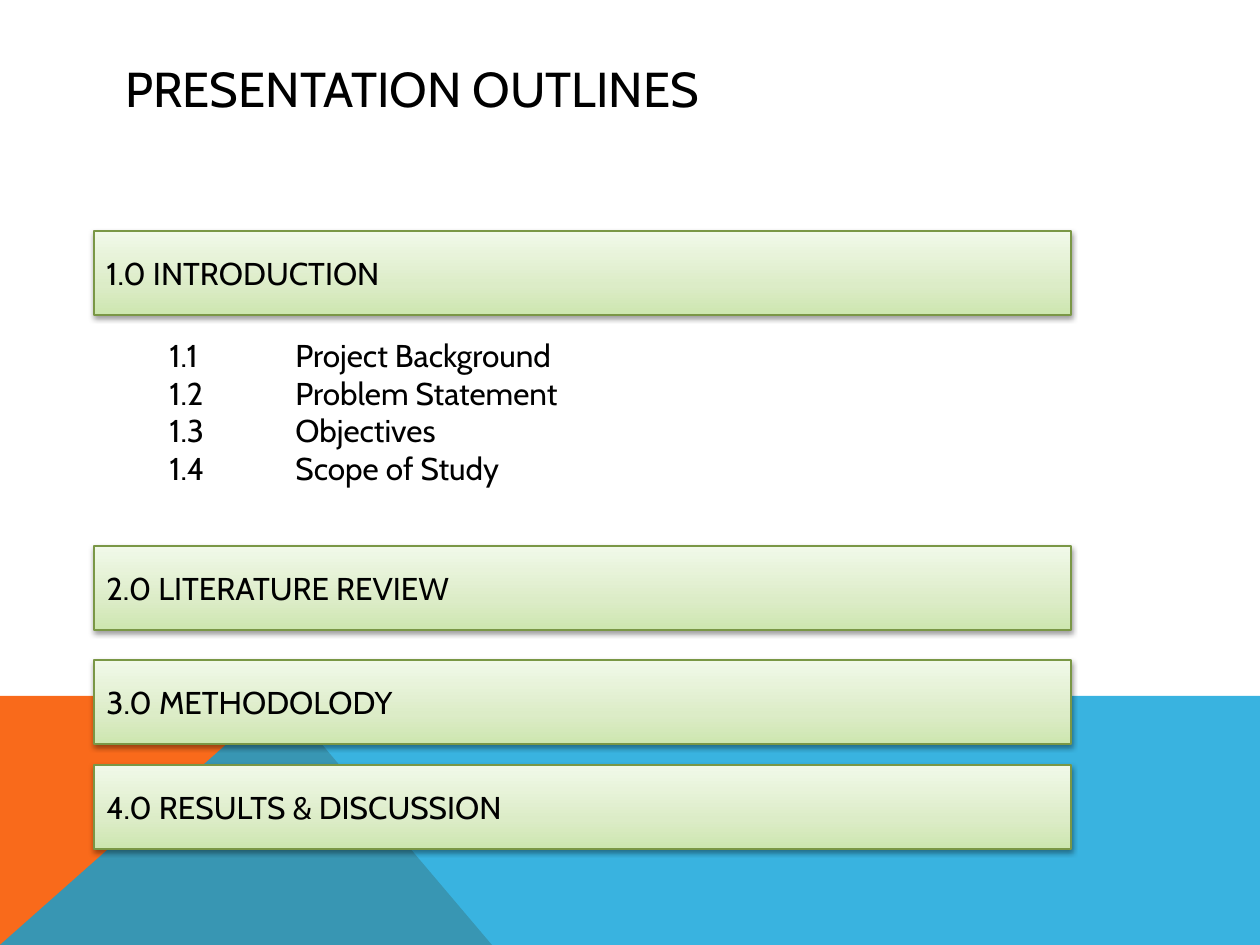
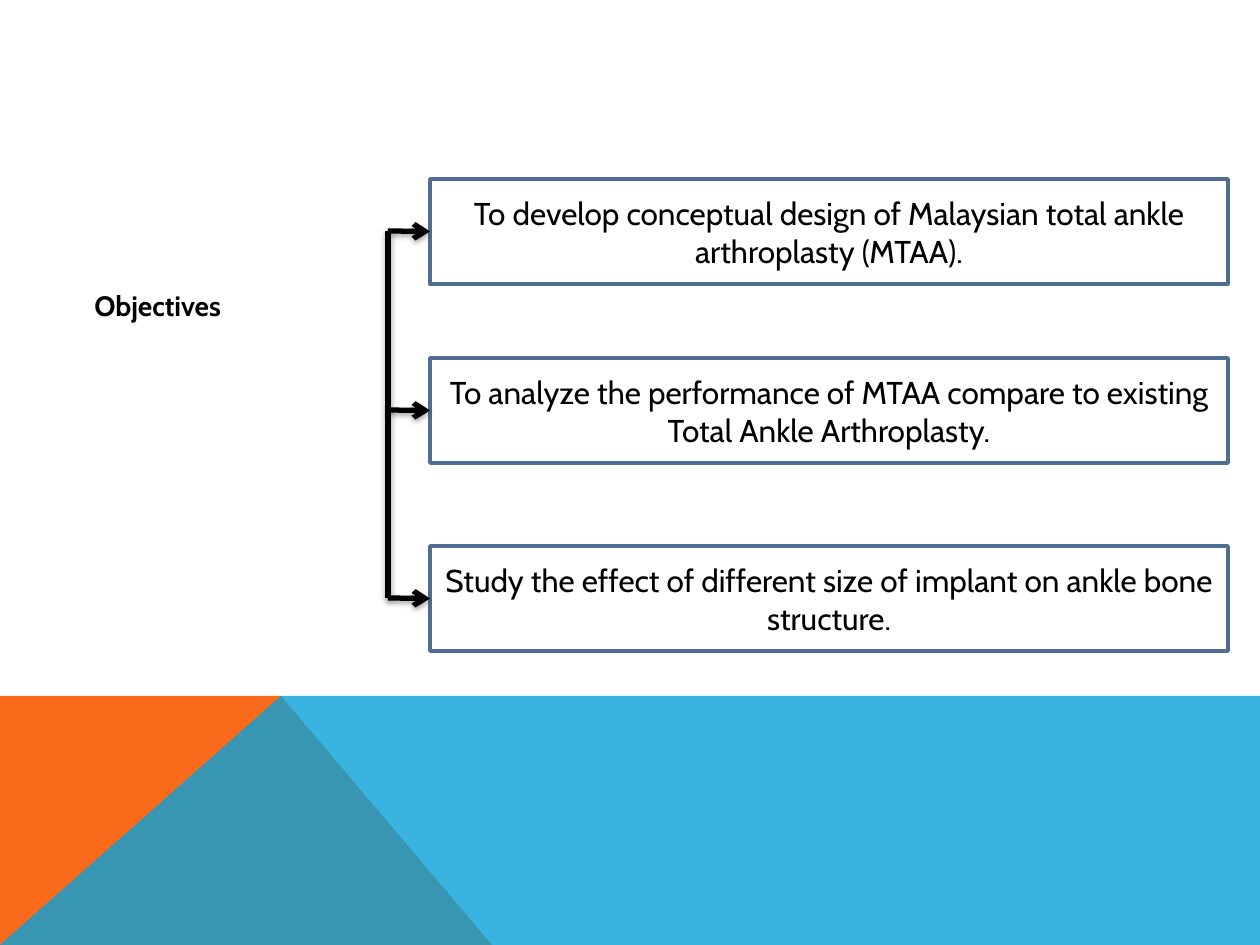
from lxml.etree import SubElement
from copy import deepcopy
from pptx import Presentation
from pptx.dml.color import RGBColor
from pptx.enum.shapes import MSO_CONNECTOR, MSO_SHAPE
from pptx.enum.text import MSO_ANCHOR, PP_ALIGN
from pptx.oxml.ns import qn
from pptx.util import Inches, Pt

PX = Inches(1) / 126
FONT = "Cabin"
COLORS = {
    "text": "000000",
    "paper": "FFFFFF",
    "orange": "F96A1B",
    "blue": "08A1D9",
    "bar_bottom": "CDE6AF",
    "bar_middle": "DCECC7",
    "bar_top": "F1F9E9",
    "bar_edge": "7A9746",
    "goal_edge": "506E94",
}
RGB = {name: RGBColor.from_string(value) for name, value in COLORS.items()}


def px(*lengths):
    return [round(length * PX) for length in lengths]


def write(shape, text, size, align=PP_ALIGN.LEFT, bold=False):
    frame = shape.text_frame
    frame.word_wrap = True
    frame.vertical_anchor = MSO_ANCHOR.MIDDLE
    frame.text = text
    for paragraph in frame.paragraphs:
        paragraph.alignment = align
        for run in paragraph.runs:
            run.font.name = FONT
            run.font.size = Pt(size)
            run.font.bold = bold
            run.font.color.rgb = RGB["text"]


prs = Presentation()
prs.slide_width, prs.slide_height = px(1260, 945)
outline_slide, objectives_slide = [prs.slides.add_slide(prs.slide_layouts[6]) for _ in range(2)]

# Bottom band shared by both slides: outline points and opacity in percent
band = [
    ("orange", [(0, 945), (0, 696), (281, 696), (492, 945)], 100),
    ("blue", [(0, 945), (281, 696), (1260, 696), (1260, 945)], 80),
]
for slide in prs.slides:
    for color, points, opacity in band:
        builder = slide.shapes.build_freeform(*points[0], scale=PX)
        builder.add_line_segments(points[1:], close=True)
        panel = builder.convert_to_shape()
        panel.shadow.inherit = False
        panel.line.fill.background()
        panel.fill.solid()
        panel.fill.fore_color.rgb = RGB[color]
        if opacity < 100:
            tint = panel._element.spPr.find(".//" + qn("a:srgbClr"))
            SubElement(tint, qn("a:alpha"), val=str(opacity * 1000))

# Parts that cast a soft shadow, with its opacity in percent
shadowed = []

# Outline slide: title
title = outline_slide.shapes.add_textbox(*px(113, 50, 1036, 76))
write(title, "PRESENTATION OUTLINES", 28)

# Outline slide: chapter bars
chapters = [
    (231, "1.0 INTRODUCTION"),
    (546, "2.0 LITERATURE REVIEW"),
    (660, "3.0 METHODOLODY"),
    (765, "4.0 RESULTS & DISCUSSION"),
]
for top, heading in chapters:
    bar = outline_slide.shapes.add_shape(MSO_SHAPE.RECTANGLE, *px(94, top, 977, 84))
    bar.shadow.inherit = False
    bar.line.color.rgb = RGB["bar_edge"]
    bar.line.width = Pt(0.75)
    bar.fill.gradient()
    bar.fill.gradient_angle = 90
    stop_list = bar._element.spPr.find(".//" + qn("a:gsLst"))
    stop_list.insert(1, deepcopy(stop_list[0]))
    shades = [(0, "bar_bottom"), (0.35, "bar_middle"), (1, "bar_top")]
    for stop, (position, shade) in zip(bar.fill.gradient_stops, shades):
        stop.position = position
        stop.color.rgb = RGB[shade]
    write(bar, heading, 18)
    shadowed.append((bar, 38))

# Outline slide: sections of the introduction
sections = ["Project Background", "Problem Statement", "Objectives", "Scope of Study"]
section_list = outline_slide.shapes.add_textbox(*px(94, 336, 977, 151))
section_list.text_frame.margin_top = section_list.text_frame.margin_bottom = 0
write(section_list, "\n".join(f"1.{n}\t{name}" for n, name in enumerate(sections, 1)), 18)
indent, tab_width = px(63, 126)
for paragraph in section_list.text_frame.paragraphs:
    properties = paragraph._p.get_or_add_pPr()
    properties.set("marL", str(indent))
    properties.set("indent", "0")
    properties.set("defTabSz", str(tab_width))

# Objectives slide: label
label = objectives_slide.shapes.add_textbox(*px(82, 275, 280, 60))
write(label, "Objectives", 16, bold=True)

# Objectives slide: goals
goals = [
    (179, "To develop conceptual design of Malaysian total ankle arthroplasty (MTAA)."),
    (358, "To analyze the performance of MTAA compare to existing Total Ankle Arthroplasty."),
    (546, "Study the effect of different size of implant on ankle bone structure."),
]
goal_height = 105
goal_boxes = []
for top, goal in goals:
    goal_box = objectives_slide.shapes.add_shape(
        MSO_SHAPE.RECTANGLE, *px(430, top, 798, goal_height))
    goal_box.shadow.inherit = False
    goal_box.fill.solid()
    goal_box.fill.fore_color.rgb = RGB["paper"]
    goal_box.line.color.rgb = RGB["goal_edge"]
    goal_box.line.width = Pt(2)
    write(goal_box, goal, 18, PP_ALIGN.CENTER)
    goal_boxes.append(goal_box)

# Objectives slide: spine, then one arrow to each goal
spine_x = 388
middles = [top + goal_height // 2 for top, _ in goals]
branches = [(spine_x, middles[0], spine_x, middles[-1], None)]
branches += [(spine_x, y, 430, y, box) for y, box in zip(middles, goal_boxes)]
for x1, y1, x2, y2, target in branches:
    branch = objectives_slide.shapes.add_connector(
        MSO_CONNECTOR.STRAIGHT, *px(x1, y1, x2, y2))
    branch.line.color.rgb = RGB["text"]
    branch.line.width = Pt(3)
    if target is not None:
        branch.end_connect(target, 1)
        SubElement(branch.line._get_or_add_ln(), qn("a:tailEnd"), type="arrow")
    SubElement(branch._element.spPr, qn("a:effectLst"))
    shadowed.append((branch, 35))

# Soft shadows
for part, opacity in shadowed:
    effects = part._element.spPr.find(qn("a:effectLst"))
    shadow = SubElement(effects, qn("a:outerShdw"), blurRad="40000", dist="20000",
                        dir="5400000", rotWithShape="0")
    shade = SubElement(shadow, qn("a:srgbClr"), val=COLORS["text"])
    SubElement(shade, qn("a:alpha"), val=str(opacity * 1000))

prs.save("out.pptx")
